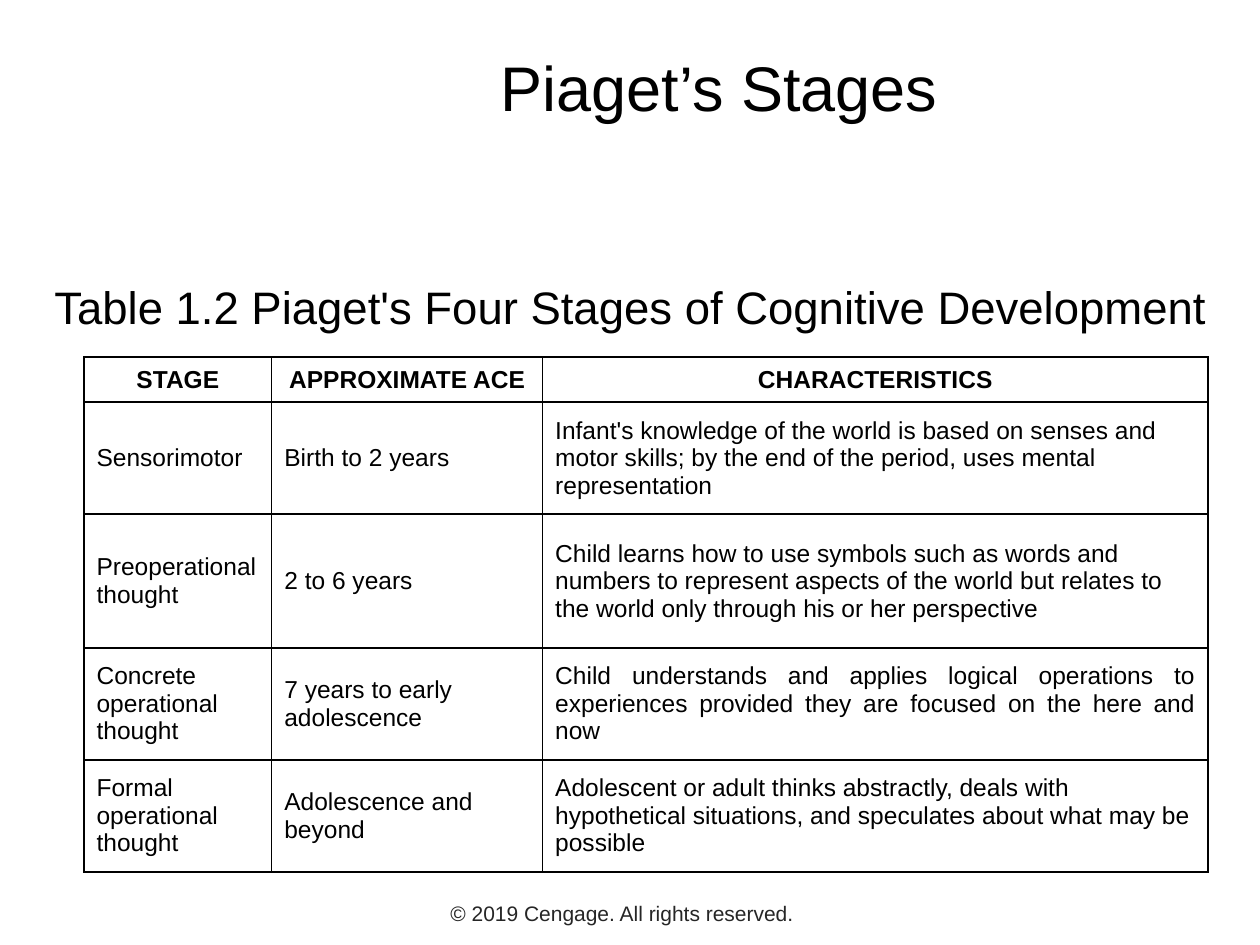
from lxml import etree
from pptx import Presentation
from pptx.dml.color import RGBColor
from pptx.enum.text import MSO_ANCHOR, PP_ALIGN
from pptx.oxml.ns import qn
from pptx.util import Pt

LEFT, CENTER, JUSTIFY = PP_ALIGN.LEFT, PP_ALIGN.CENTER, PP_ALIGN.JUSTIFY
TOP, MIDDLE = MSO_ANCHOR.TOP, MSO_ANCHOR.MIDDLE

BLACK = "000000"
GRAY = "262626"

COLUMN_WIDTHS = [107.3, 154.8, 380.2]
ROW_HEIGHTS = [25.8, 64, 76.5, 64, 64]
STAGES = [
    ("STAGE", "APPROXIMATE ACE", "CHARACTERISTICS"),
    ("Sensorimotor", "Birth to 2 years",
     "Infant's knowledge of the world is based on senses and motor skills; "
     "by the end of the period, uses mental representation"),
    ("Preoperational thought", "2 to 6 years",
     "Child learns how to use symbols such as words and numbers to represent "
     "aspects of the world but relates to the world only through his or her perspective"),
    ("Concrete operational thought", "7 years to early adolescence",
     "Child understands and applies logical operations to experiences "
     "provided they are focused on the here and now"),
    ("Formal operational thought", "Adolescence and beyond",
     "Adolescent or adult thinks abstractly, deals with hypothetical situations, "
     "and speculates about what may be possible"),
]
JUSTIFIED_CELL = (3, 2)


def color(value):
    return RGBColor.from_string(value)


class SlideBuilder:
    font = "Arial"
    border_width = 1

    def __init__(self, slide):
        self.slide = slide

    def set_text(self, text_frame, text, size, fill=BLACK, bold=False, align=LEFT):
        text_frame.text = text
        paragraph = text_frame.paragraphs[0]
        paragraph.alignment = align
        font = paragraph.runs[0].font
        font.name, font.size, font.bold = self.font, Pt(size), bold
        font.color.rgb = color(fill)

    def title(self, text, left, top, width, height, size):
        shape = self.slide.shapes.title
        shape.left, shape.top, shape.width, shape.height = map(Pt, (left, top, width, height))
        shape.text_frame.vertical_anchor = MIDDLE
        self.set_text(shape.text_frame, text, size, align=CENTER)

    def text(self, text, left, top, width, height, size, fill=BLACK, align=LEFT):
        shape = self.slide.shapes.add_textbox(*map(Pt, (left, top, width, height)))
        shape.text_frame.word_wrap = True
        shape.text_frame.vertical_anchor = TOP
        self.set_text(shape.text_frame, text, size, fill, align=align)

    def border(self, cell):
        properties = cell._tc.get_or_add_tcPr()
        for position, side in enumerate(("a:lnL", "a:lnR", "a:lnT", "a:lnB")):
            line = etree.Element(qn(side), w=str(Pt(self.border_width)))
            solid = etree.SubElement(line, qn("a:solidFill"))
            etree.SubElement(solid, qn("a:srgbClr"), val=BLACK)
            properties.insert(position, line)

    def table(self, rows, left, top, widths, heights, size, justified):
        frame = self.slide.shapes.add_table(
            len(rows), len(widths), Pt(left), Pt(top), Pt(sum(widths)), Pt(sum(heights)))
        table = frame.table
        for column, width in zip(table.columns, widths):
            column.width = Pt(width)
        for row, height in zip(table.rows, heights):
            row.height = Pt(height)
        for row_index, texts in enumerate(rows):
            header = row_index == 0
            for column_index, text in enumerate(texts):
                cell = table.cell(row_index, column_index)
                cell.vertical_anchor = MIDDLE
                cell.fill.background()
                self.border(cell)
                align = CENTER if header else LEFT
                if (row_index, column_index) == justified:
                    align = JUSTIFY
                self.set_text(cell.text_frame, text, size, bold=header, align=align)


def main():
    presentation = Presentation()
    presentation.slide_width, presentation.slide_height = Pt(720), Pt(540)
    slide = presentation.slides.add_slide(presentation.slide_layouts[5])
    builder = SlideBuilder(slide)

    # Title and table caption
    builder.title("Piaget’s Stages", 138, 18, 546, 63, 36)
    builder.text("Table 1.2 Piaget's Four Stages of Cognitive Development",
                 24, 156, 684, 36, 26)

    # Stages table
    builder.table(STAGES, 48, 204, COLUMN_WIDTHS, ROW_HEIGHTS, 14, JUSTIFIED_CELL)

    # Copyright line
    builder.text("© 2019 Cengage. All rights reserved.", 100, 511, 511, 22, 12, GRAY, CENTER)

    presentation.save("out.pptx")


if __name__ == "__main__":
    main()
